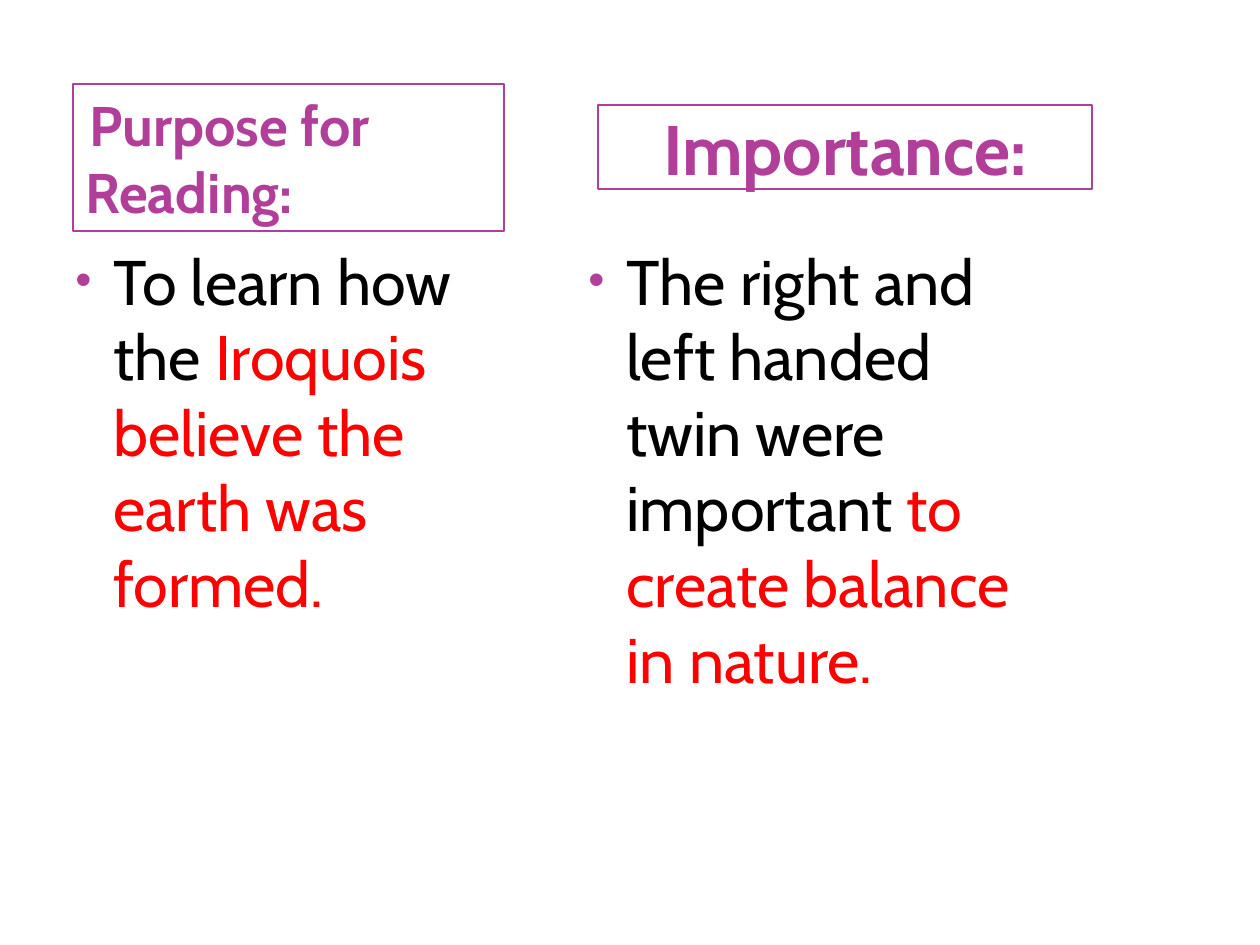
from pptx import Presentation
from pptx.dml.color import RGBColor as RGB
from pptx.enum.shapes import MSO_SHAPE as Shape
from pptx.enum.text import MSO_ANCHOR as Anchor, PP_ALIGN as Align
from pptx.oxml import parse_xml
from pptx.oxml.ns import nsdecls
from pptx.util import Pt

PX = 914400 // 126  # EMU in one px
FONT = "Cabin"
HEX = {"plum": "B13F9A", "black": "000000", "red": "FF0000"}


def color(name):
    return RGB.from_string(HEX[name])


def add_run(para, text, size, tone, bold=False):
    run = para.add_run()
    run.text = text
    font = run.font
    font.name, font.size, font.bold = FONT, Pt(size), bold
    font.color.rgb = color(tone)


def add_head(slide, box, text, size, align, indent=0):
    """Outlined heading box."""
    shape = slide.shapes.add_shape(Shape.RECTANGLE, *[n * PX for n in box])
    shape.shadow.inherit = False
    shape.fill.background()
    shape.line.color.rgb = color("plum")
    shape.line.width = Pt(1)
    frame = shape.text_frame
    frame.word_wrap = True
    frame.vertical_anchor = Anchor.MIDDLE
    para = frame.paragraphs[0]
    para.alignment = align
    para._p.get_or_add_pPr().set("indent", str(indent * PX))
    add_run(para, text, size, "plum", True)


def add_bullet(para, gap):
    """Small plum bullet with a hanging indent."""
    props = para._p.get_or_add_pPr()
    props.set("marL", str(gap * PX))
    props.set("indent", str(-gap * PX))
    ns = nsdecls("a")
    for xml in (
        f'<a:buClr {ns}><a:srgbClr val="{HEX["plum"]}"/></a:buClr>',
        f'<a:buSzPct {ns} val="73000"/>',
        f'<a:buFont {ns} typeface="Arial"/>',
        f'<a:buChar {ns} char="•"/>',
    ):
        props.append(parse_xml(xml))


def add_body(slide, left, runs):
    """Bulleted column of text."""
    box = [n * PX for n in (left, 236, 485, 567)]
    frame = slide.shapes.add_textbox(*box).text_frame
    frame.word_wrap = True
    para = frame.paragraphs[0]
    add_bullet(para, 38)
    for text, tone in runs:
        add_run(para, text, 36, tone)


def main():
    deck = Presentation()
    deck.slide_width, deck.slide_height = 1260 * PX, 945 * PX
    slide = deck.slides.add_slide(deck.slide_layouts[6])

    # Headings
    add_head(slide, (73, 84, 431, 147), "Purpose for Reading:", 31.9,
             Align.LEFT, indent=4)
    add_head(slide, (598, 105, 494, 84), "Importance:", 40, Align.CENTER)

    # Columns
    add_body(slide, 63, [
        ("To learn how the ", "black"),
        ("Iroquois believe the earth was formed.", "red"),
    ])
    add_body(slide, 576, [
        ("The right and left handed twin were important ", "black"),
        ("to create balance in nature.", "red"),
    ])

    deck.save("out.pptx")


if __name__ == "__main__":
    main()
